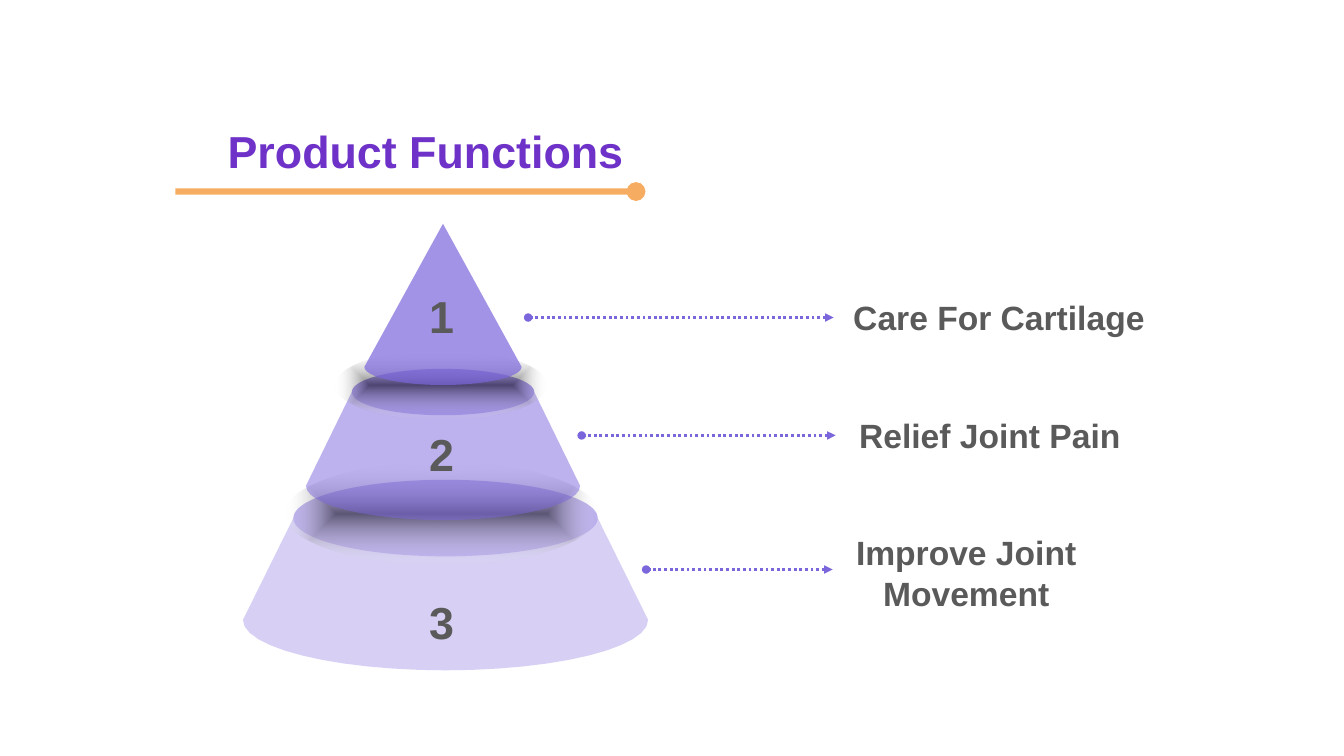
from math import cos, pi, sin

from lxml import etree
from pptx import Presentation
from pptx.dml.color import RGBColor
from pptx.enum.dml import MSO_LINE
from pptx.enum.shapes import MSO_CONNECTOR, MSO_SHAPE
from pptx.enum.text import MSO_AUTO_SIZE, PP_ALIGN
from pptx.oxml import parse_xml
from pptx.oxml.ns import nsdecls, qn
from pptx.util import Inches, Pt

OVAL = MSO_SHAPE.OVAL
STRAIGHT = MSO_CONNECTOR.STRAIGHT
DOTS = MSO_LINE.ROUND_DOT
SOLID = MSO_LINE.SOLID
LEFT, CENTER = PP_ALIGN.LEFT, PP_ALIGN.CENTER
GROW = MSO_AUTO_SIZE.SHAPE_TO_FIT_TEXT

PURPLE = RGBColor(0x6E, 0x32, 0xC8)
VIOLET = RGBColor(0x7C, 0x66, 0xDC)
ORANGE = RGBColor(0xF5, 0x8B, 0x1F)
GRAY = RGBColor(0x5A, 0x5A, 0x5A)

COLS, ROWS = 133.33, 75
STEPS = 24

SHADE = (
    f'<a:gradFill {nsdecls("a")} rotWithShape="1"><a:gsLst>'
    '<a:gs pos="0"><a:srgbClr val="000000"><a:alpha val="50000"/></a:srgbClr></a:gs>'
    '<a:gs pos="100000"><a:srgbClr val="FFFFFF"><a:alpha val="0"/></a:srgbClr></a:gs>'
    '</a:gsLst><a:path path="shape">'
    '<a:fillToRect l="50000" t="50000" r="50000" b="50000"/>'
    '</a:path></a:gradFill>'
)


def grid(n):
    return Inches(n / 10)


def fade(props, share):
    color = next(props.iter(qn("a:srgbClr")))
    etree.SubElement(color, qn("a:alpha")).set("val", str(share * 1000))


def tint(shape, share):
    shape.shadow.inherit = False
    shape.line.fill.background()
    shape.fill.solid()
    shape.fill.fore_color.rgb = VIOLET
    fade(shape.element.spPr, share)


def oval(slide, mid, y, rx, ry):
    return slide.shapes.add_shape(
        OVAL, grid(mid - rx), grid(y - ry), grid(2 * rx), grid(2 * ry))


def arc(mid, y, rx, ry, start):
    turns = [start + pi * i / STEPS for i in range(STEPS + 1)]
    return [(grid(mid + rx * cos(t)), grid(y + ry * sin(t))) for t in turns]


def tier(slide, mid, top, base, share):
    roof = arc(mid, *top, pi) if top[1] else [(grid(mid), grid(top[0]))]
    edge = arc(mid, *base, 0) + roof
    pen = slide.shapes.build_freeform(*edge[0])
    pen.add_line_segments(edge[1:], close=True)
    tint(pen.convert_to_shape(), share)
    if top[1]:
        tint(oval(slide, mid, *top), share)


def shade(slide, mid, y, rx, ry):
    shape = oval(slide, mid, y, rx, ry)
    shape.shadow.inherit = False
    shape.line.fill.background()
    shape.fill.background()
    props = shape.element.spPr
    props.replace(props.find(qn("a:noFill")), parse_xml(SHADE))


def rule(slide, x1, x2, y, color, width, dash, head=None):
    line = slide.shapes.add_connector(STRAIGHT, grid(x1), grid(y), grid(x2), grid(y))
    line.line.color.rgb = color
    line.line.width = Pt(width)
    line.line.dash_style = dash
    props = line.element.spPr
    stroke = props.find(qn("a:ln"))
    if head:
        etree.SubElement(stroke, qn("a:headEnd")).set("type", head)
    etree.SubElement(stroke, qn("a:tailEnd")).set("type", "oval")
    etree.SubElement(props, qn("a:effectLst"))
    return line


def text(slide, x, y, w, h, lines, size, color, align=LEFT):
    frame = slide.shapes.add_textbox(grid(x), grid(y), grid(w), grid(h)).text_frame
    frame.word_wrap = True
    frame.auto_size = GROW
    frame.text = "\n".join(lines)
    for para in frame.paragraphs:
        para.alignment = align
        para.font.name = "Arial"
        para.font.size = Pt(size)
        para.font.bold = True
        para.font.color.rgb = color


def main():
    deck = Presentation()
    deck.slide_width, deck.slide_height = grid(COLS), grid(ROWS)
    slide = deck.slides.add_slide(deck.slide_layouts[6])

    text(slide, 21.6, 11.8, 67.5, 6.4, ["Product Functions"], 32, PURPLE)
    bar = rule(slide, 17.4, 63.1, 19, ORANGE, 4.5, SOLID)
    fade(bar.element.spPr, 70)

    tier(slide, 44.2, (51.4, 15.1, 3.8), (61.5, 20.1, 5), 30)
    shade(slide, 43.8, 50.95, 15.5, 5.05)
    tier(slide, 43.95, (38.9, 9.05, 2.3), (48.2, 13.6, 3.4), 50)
    shade(slide, 43.75, 38.2, 10.45, 3.4)
    tier(slide, 43.95, (22.2, 0, 0), (36.4, 7.8, 1.8), 70)

    items = [
        (["Care For Cartilage"], 99.1, 31.5, 52.4, 82.7, 28.2),
        (["Relief Joint Pain"], 98.2, 43.2, 57.7, 82.9, 41.8),
        (["Improve Joint", "Movement"], 95.85, 56.5, 64.1, 82.6, 58.5),
    ]
    for i, (lines, mid, y, start, end, top) in enumerate(items):
        text(slide, mid - 17.5, 29 + 11.65 * i, 35, 1 + 4.05 * len(lines),
             lines, 24, GRAY, CENTER)
        rule(slide, end, start, y, VIOLET, 2, DOTS, "triangle")
        text(slide, 41.6, top, 6.7, 6.4, [str(i + 1)], 32, GRAY)

    deck.save("out.pptx")


if __name__ == "__main__":
    main()
